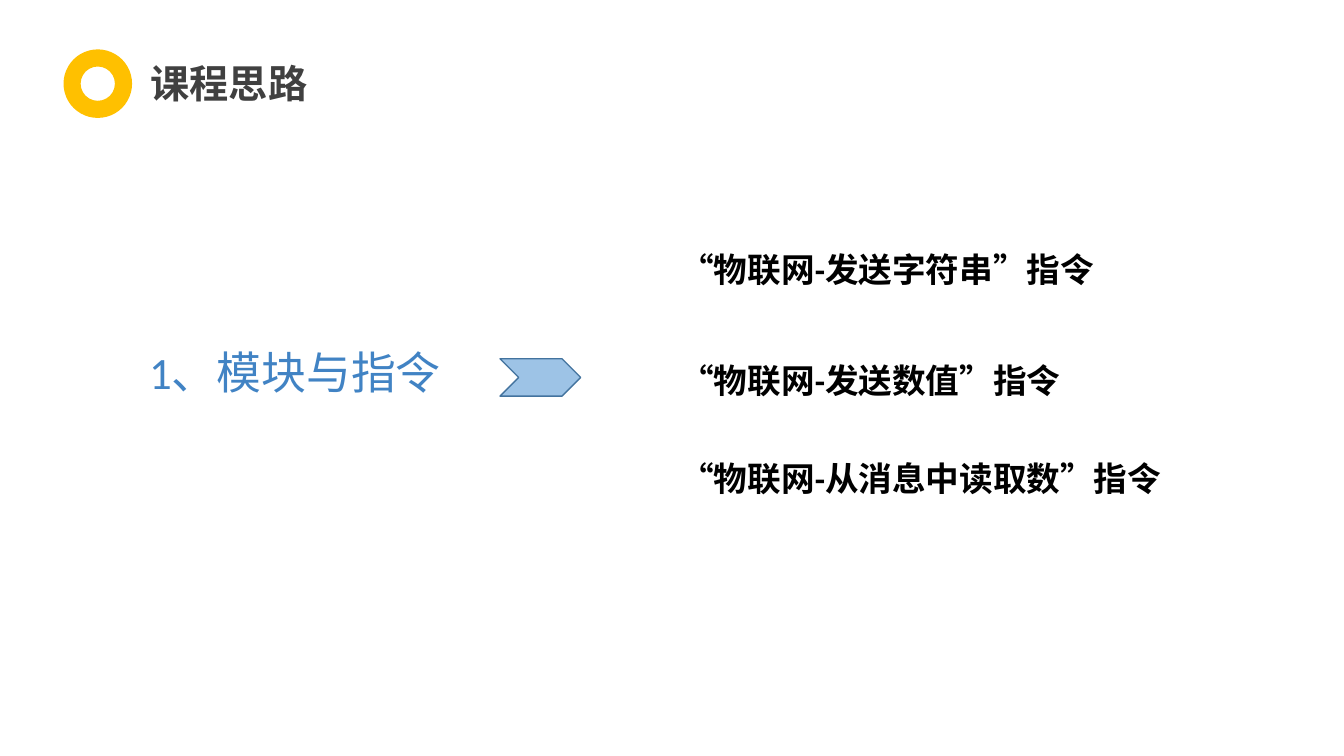
from pptx import Presentation
from pptx.dml.color import RGBColor
from pptx.enum.shapes import MSO_SHAPE
from pptx.enum.text import MSO_AUTO_SIZE, PP_ALIGN
from pptx.util import Pt

PX = 9144  # 100 px to the inch
GOLD = RGBColor(0xFF, 0xC0, 0x00)
GRAY = RGBColor(0x40, 0x40, 0x40)
BLUE = RGBColor(0x41, 0x83, 0xC4)
LIGHT_BLUE = RGBColor(0x9D, 0xC3, 0xE6)
DARK_BLUE = RGBColor(0x43, 0x73, 0x9E)
BLACK = RGBColor(0x00, 0x00, 0x00)


def add_text(page, text, left, top, width, height, size, color, bold, align=PP_ALIGN.LEFT):
    box = page.shapes.add_textbox(left * PX, top * PX, width * PX, height * PX)
    frame = box.text_frame
    frame.word_wrap = False
    frame.auto_size = MSO_AUTO_SIZE.SHAPE_TO_FIT_TEXT
    para = frame.paragraphs[0]
    para.text = text
    para.alignment = align
    para.font.name = "Calibri"
    para.font.size = Pt(size)
    para.font.bold = bold
    para.font.color.rgb = color


def add_solid(page, kind, left, top, width, height, color):
    shape = page.shapes.add_shape(kind, left * PX, top * PX, width * PX, height * PX)
    shape.shadow.inherit = False
    shape.fill.solid()
    shape.fill.fore_color.rgb = color
    return shape


deck = Presentation()
deck.slide_width = 1333 * PX
deck.slide_height = 750 * PX
page = deck.slides.add_slide(deck.slide_layouts[6])

# Heading with ring
add_text(page, "课程思路", 138, 54, 178, 57, 28, GRAY, True, PP_ALIGN.CENTER)
ring = add_solid(page, MSO_SHAPE.DONUT, 63, 49, 68, 68, GOLD)
ring.line.fill.background()

# Topic and arrow
add_text(page, "1、模块与指令", 138, 337, 312, 64, 32, BLUE, False)
arrow = add_solid(page, MSO_SHAPE.CHEVRON, 496, 356, 80, 37, LIGHT_BLUE)
arrow.line.color.rgb = DARK_BLUE
arrow.line.width = Pt(1)

# Commands
commands = [
    ("发送字符串", 242, 437),
    ("发送数值", 352, 403),
    ("从消息中读取数", 449, 504),
]
for action, top, width in commands:
    add_text(page, f"“物联网-{action}”指令", 665, top, width, 50, 24, BLACK, True)

deck.save("out.pptx")
